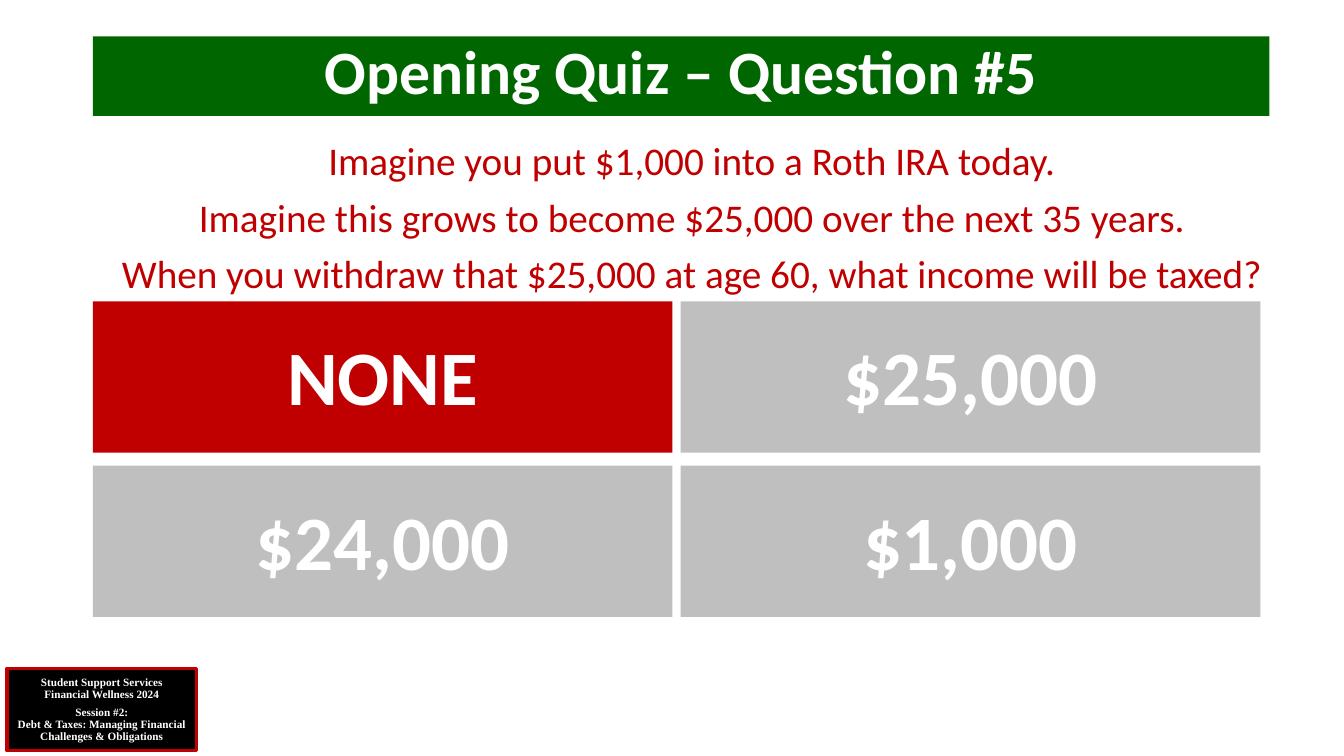
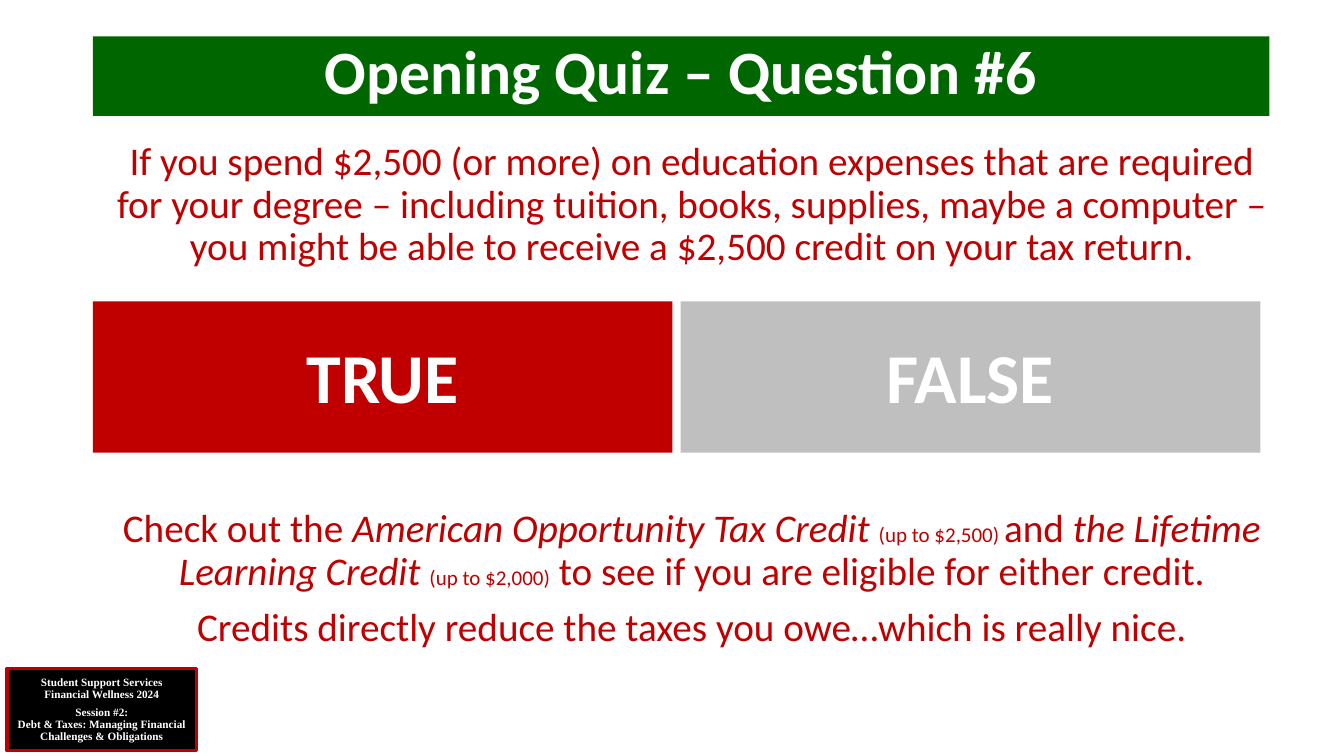
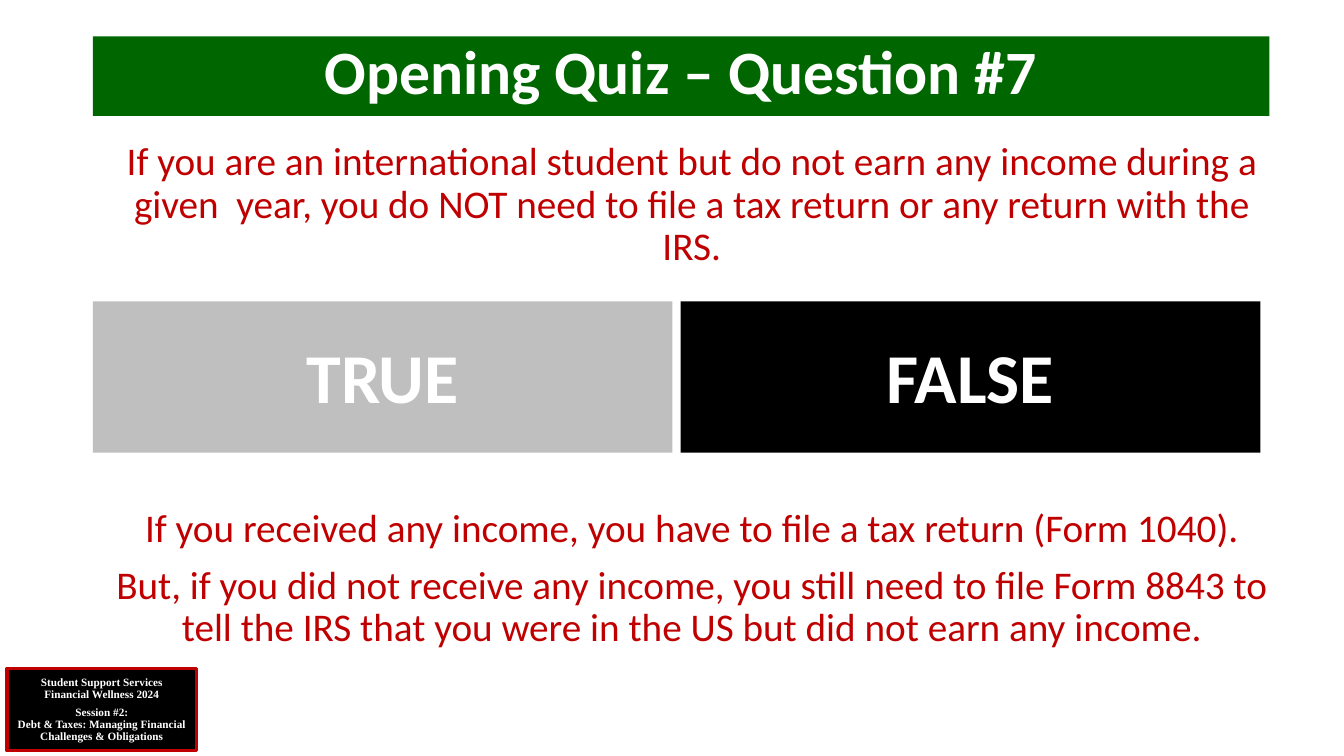
from dataclasses import dataclass, field

from pptx import Presentation
from pptx.dml.color import RGBColor
from pptx.enum.shapes import MSO_SHAPE
from pptx.enum.text import MSO_ANCHOR, MSO_AUTO_SIZE, PP_ALIGN
from pptx.presentation import Presentation as PresentationType
from pptx.shapes.base import BaseShape
from pptx.slide import Slide
from pptx.text.text import TextFrame
from pptx.util import Inches, Pt


@dataclass(frozen=True)
class Theme:
    green: RGBColor = RGBColor(0x00, 0x66, 0x00)
    red: RGBColor = RGBColor(0xC0, 0x00, 0x00)
    gray: RGBColor = RGBColor(0xBF, 0xBF, 0xBF)
    black: RGBColor = RGBColor(0x00, 0x00, 0x00)
    white: RGBColor = RGBColor(0xFF, 0xFF, 0xFF)
    body_font: str = "Calibri"
    badge_font: str = "Times New Roman"
    title_size: int = 44
    body_size: int = 28
    aside_size: int = 15
    amount_size: int = 55
    verdict_size: int = 50
    badge_size: int = 8


THEME = Theme()
BODY = {"name": THEME.body_font, "size": THEME.body_size, "color": THEME.red}
TITLE = {"name": THEME.body_font, "size": THEME.title_size, "bold": True, "color": THEME.white}
BADGE = {"name": THEME.badge_font, "size": THEME.badge_size, "bold": True, "color": THEME.white}

TITLE_ONLY_LAYOUT = 5
LEFT = 0.92
TILE_TOP = 2.99
TILE_WIDTH, TILE_HEIGHT = 5.75, 1.5
COLUMN_STEP, ROW_STEP = 5.83, 1.63
TILE_COLUMNS = 2


@dataclass(frozen=True)
class Run:
    text: str
    format: dict = field(default_factory=dict)


@dataclass(frozen=True)
class Line:
    runs: list[Run]
    space_before: float = 0


@dataclass(frozen=True)
class Answer:
    text: str
    fill: RGBColor = THEME.gray


@dataclass(frozen=True)
class Question:
    number: int
    prompt: list[Line]
    answers: list[Answer]
    answer_size: int
    explanation: list[Line] = field(default_factory=list)


def plain_lines(*texts: str, gap: float = 10) -> list[Line]:
    """Make one-run lines with the gap before every line but the first."""
    return [Line([Run(text)], gap if index else 0) for index, text in enumerate(texts)]


ITALIC = {"italic": True}
ASIDE = {"size": THEME.aside_size}

QUESTIONS = [
    Question(
        5,
        plain_lines(
            "Imagine you put $1,000 into a Roth IRA today.",
            "Imagine this grows to become $25,000 over the next 35 years.",
            "When you withdraw that $25,000 at age 60, what income will be taxed?",
        ),
        [Answer("NONE", THEME.red), Answer("$25,000"), Answer("$24,000"), Answer("$1,000")],
        THEME.amount_size,
    ),
    Question(
        6,
        plain_lines(
            "If you spend $2,500 (or more) on education expenses that are required for your "
            "degree – including tuition, books, supplies, maybe a computer – you might be able "
            "to receive a $2,500 credit on your tax return."
        ),
        [Answer("TRUE", THEME.red), Answer("FALSE")],
        THEME.verdict_size,
        [
            Line([
                Run("Check out the "),
                Run("American Opportunity Tax Credit ", ITALIC),
                Run("(up to $2,500) ", ASIDE),
                Run("and"),
                Run(" the Lifetime Learning Credit ", ITALIC),
                Run("(up to $2,000)", ASIDE),
                Run(" to see if you are eligible for either credit."),
            ]),
            Line([Run("Credits directly reduce the taxes you owe…which is really nice.")], 10),
        ],
    ),
    Question(
        7,
        plain_lines(
            "If you are an international student but do not earn any income during a given  year, "
            "you do NOT need to file a tax return or any return with the IRS."
        ),
        [Answer("TRUE"), Answer("FALSE", THEME.black)],
        THEME.verdict_size,
        plain_lines(
            "If you received any income, you have to file a tax return (Form 1040).",
            "But, if you did not receive any income, you still need to file Form 8843 to tell "
            "the IRS that you were in the US but did not earn any income.",
        ),
    ),
]

BADGE_LINES = [
    *plain_lines("Student Support Services", "Financial Wellness 2024", gap=0),
    Line([Run("Session #2:")], 4),
    *plain_lines("Debt & Taxes: Managing Financial Challenges & Obligations"),
]


def write_lines(frame: TextFrame, lines: list[Line], base_format: dict, **frame_format) -> None:
    frame_settings = {
        "word_wrap": True,
        "auto_size": MSO_AUTO_SIZE.NONE,
        "vertical_anchor": MSO_ANCHOR.TOP,
        **frame_format,
    }
    for name, value in frame_settings.items():
        setattr(frame, name, value)
    for index, line in enumerate(lines):
        paragraph = frame.add_paragraph() if index else frame.paragraphs[0]
        paragraph.alignment = PP_ALIGN.CENTER
        paragraph.line_spacing = 0.9
        paragraph.space_before = Pt(line.space_before)
        for part in line.runs:
            run = paragraph.add_run()
            run.text = part.text
            settings = {**base_format, **part.format}
            run.font.color.rgb = settings.pop("color")
            run.font.size = Pt(settings.pop("size"))
            for name, value in settings.items():
                setattr(run.font, name, value)


def add_box(slide: Slide, left: float, top: float, width: float, height: float,
            fill: RGBColor) -> BaseShape:
    shape = slide.shapes.add_shape(
        MSO_SHAPE.RECTANGLE, Inches(left), Inches(top), Inches(width), Inches(height)
    )
    shape.shadow.inherit = False
    shape.fill.solid()
    shape.fill.fore_color.rgb = fill
    shape.line.fill.background()
    return shape


def add_badge(slide: Slide) -> None:
    badge = add_box(slide, 0.07, 6.63, 1.88, 0.82, THEME.black)
    badge.line.color.rgb = THEME.red
    badge.line.width = Pt(2.25)
    write_lines(badge.text_frame, BADGE_LINES, BADGE, vertical_anchor=MSO_ANCHOR.MIDDLE,
                margin_left=Inches(0.05), margin_right=Inches(0.05))


def format_title(slide: Slide, text: str) -> None:
    title = slide.shapes.title
    title.left, title.top = Inches(LEFT), Inches(0.36)
    title.width, title.height = Inches(11.67), Inches(0.79)
    title.fill.solid()
    title.fill.fore_color.rgb = THEME.green
    write_lines(title.text_frame, plain_lines(text), TITLE)


def add_body_text(slide: Slide, top: float, height: float, lines: list[Line]) -> None:
    box = slide.shapes.add_textbox(Inches(LEFT), Inches(top), Inches(11.88), Inches(height))
    write_lines(box.text_frame, lines, BODY)


def add_answers(slide: Slide, answers: list[Answer], size: int) -> None:
    for index, answer in enumerate(answers):
        row, column = divmod(index, TILE_COLUMNS)
        tile = add_box(slide, LEFT + column * COLUMN_STEP, TILE_TOP + row * ROW_STEP,
                       TILE_WIDTH, TILE_HEIGHT, answer.fill)
        write_lines(tile.text_frame, plain_lines(answer.text), {**TITLE, "size": size},
                    vertical_anchor=MSO_ANCHOR.MIDDLE, margin_top=Inches(0.13))


def add_question(presentation: PresentationType, question: Question) -> None:
    slide = presentation.slides.add_slide(presentation.slide_layouts[TITLE_ONLY_LAYOUT])
    format_title(slide, f"Opening Quiz – Question #{question.number}")
    add_badge(slide)
    add_body_text(slide, 1.36, 1.6, question.prompt)
    add_answers(slide, question.answers, question.answer_size)
    if question.explanation:
        add_body_text(slide, 5, 1.6, question.explanation)


def main() -> None:
    presentation = Presentation()
    presentation.slide_width = Inches(13.33)
    presentation.slide_height = Inches(7.5)
    for question in QUESTIONS:
        add_question(presentation, question)
    presentation.save("out.pptx")


if __name__ == "__main__":
    main()
